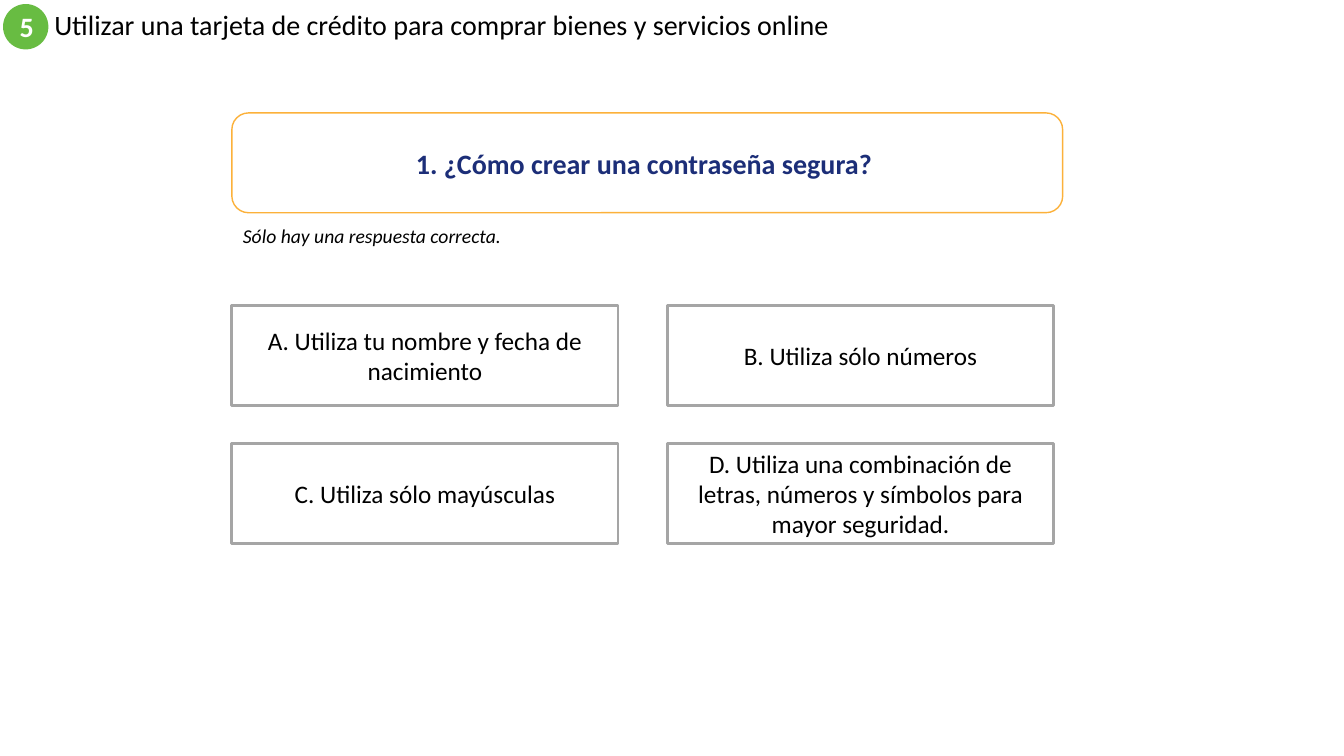
from pptx import Presentation
from pptx.dml.color import RGBColor
from pptx.enum.shapes import MSO_SHAPE
from pptx.enum.text import MSO_ANCHOR, PP_ALIGN
from pptx.util import Pt

PX = 9144  # 100 px to the inch
OVAL, ROUND, RECT = MSO_SHAPE.OVAL, MSO_SHAPE.ROUNDED_RECTANGLE, MSO_SHAPE.RECTANGLE
MIDDLE, TOP = MSO_ANCHOR.MIDDLE, MSO_ANCHOR.TOP
CENTER, LEFT = PP_ALIGN.CENTER, PP_ALIGN.LEFT

BLACK = RGBColor(0x00, 0x00, 0x00)
WHITE = RGBColor(0xFF, 0xFF, 0xFF)
GREEN = RGBColor(0x68, 0xBC, 0x42)
AMBER = RGBColor(0xFC, 0xB1, 0x3A)
NAVY = RGBColor(0x1C, 0x2E, 0x78)
GRAY = RGBColor(0xA5, 0xA5, 0xA5)

ANSWERS = [
    "A. Utiliza tu nombre y fecha de nacimiento",
    "B. Utiliza sólo números",
    "C. Utiliza sólo mayúsculas",
    "D. Utiliza una combinación de letras, números y símbolos para mayor seguridad.",
]


def scale(box):
    return [n * PX for n in box]


def write(shape, text, size, color, align=CENTER, anchor=MIDDLE, **style):
    frame = shape.text_frame
    frame.word_wrap = True
    frame.vertical_anchor = anchor
    para = frame.paragraphs[0]
    para.alignment = align
    run = para.add_run()
    run.text = text
    run.font.color.rgb = color
    for key, value in {"name": "Calibri", "size": Pt(size), **style}.items():
        setattr(run.font, key, value)
    return para


def add_box(slide, kind, box, fill, line=None, width=1):
    shape = slide.shapes.add_shape(kind, *scale(box))
    shape.shadow.inherit = False
    shape.fill.solid()
    shape.fill.fore_color.rgb = fill
    if line is None:
        shape.line.fill.background()
    else:
        shape.line.color.rgb = line
        shape.line.width = Pt(width)
    return shape


def add_header(slide, left, top, width, height):
    # Title beside the numbered badge
    side = height
    title = slide.shapes.add_textbox(
        *scale((left + side - 4, top, width - side + 4, height)))
    para = write(title, "Utilizar una tarjeta de crédito para comprar bienes y servicios online",
                 20, BLACK, LEFT)
    para.line_spacing = 0.9
    badge = add_box(slide, OVAL, (left, top, side, side), GREEN)
    write(badge, "5", 20, WHITE, bold=True)


def add_question(slide, left, top, width, height):
    # Framed question with the hint below
    frame = add_box(slide, ROUND, (left, top, width, height), WHITE, AMBER)
    write(frame, "1. ¿Cómo crear una contraseña segura? ", 20, NAVY, bold=True)
    hint = slide.shapes.add_textbox(*scale((left + 1, top + height + 6, 318, 34)))
    write(hint, "Sólo hay una respuesta correcta.", 14, BLACK, LEFT, TOP, italic=True)


def add_answers(slide, left, top, width, height):
    # Two by two grid of answers
    wide, high = 383, 99
    for i, text in enumerate(ANSWERS):
        row, col = divmod(i, 2)
        box = (left + col * (width - wide), top + row * (height - high), wide, high)
        write(add_box(slide, RECT, box, WHITE, GRAY, 2), text, 18, BLACK)


def main():
    deck = Presentation()
    deck.slide_width, deck.slide_height = scale((1333, 750))
    slide = deck.slides.add_slide(deck.slide_layouts[6])
    add_header(slide, 3, 4, 841, 45)
    add_question(slide, 230, 112, 824, 99)
    add_answers(slide, 230, 303, 815, 236)
    deck.save("out.pptx")


if __name__ == "__main__":
    main()
